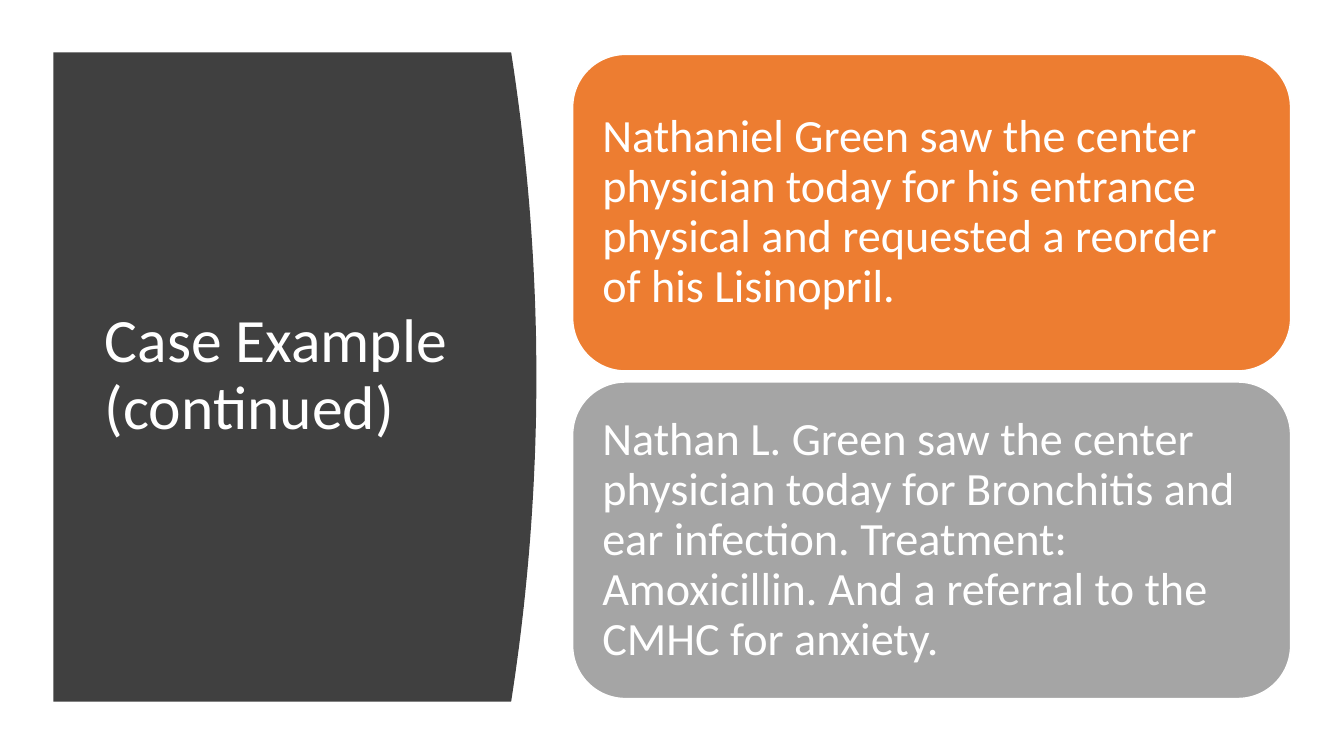
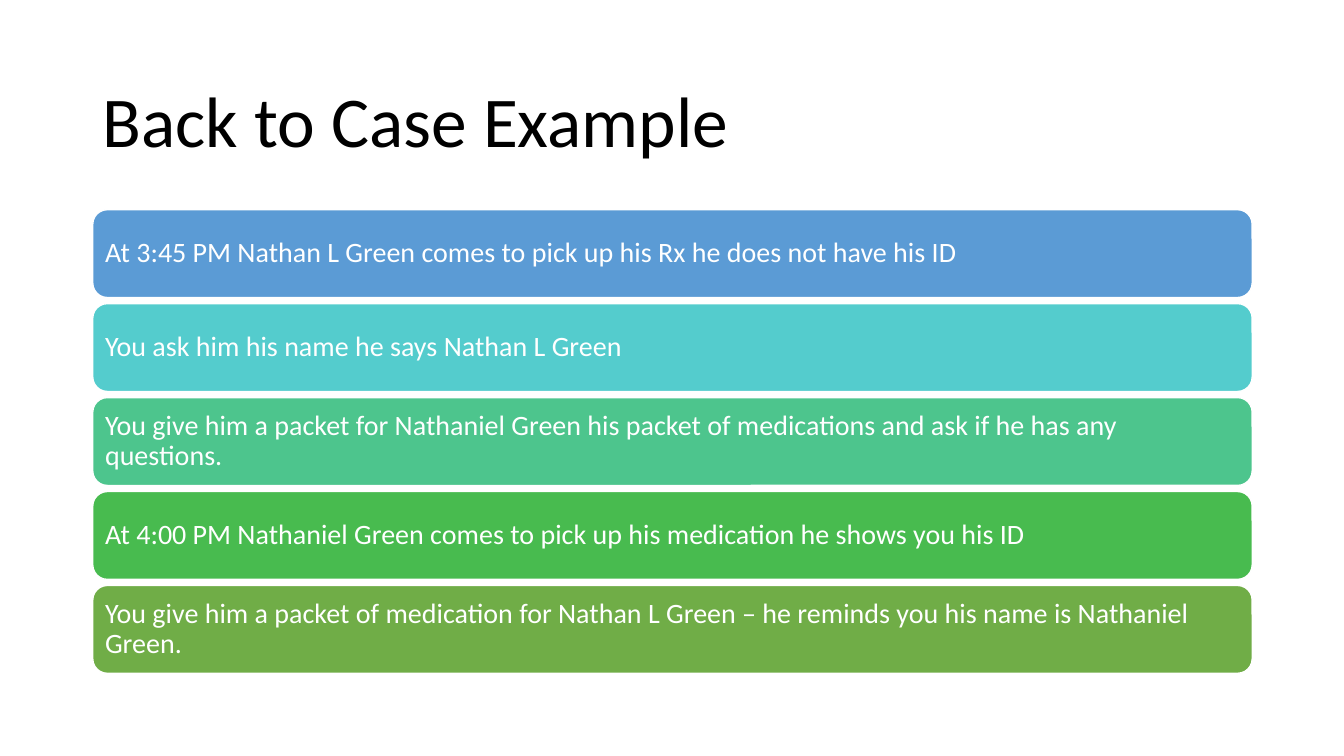
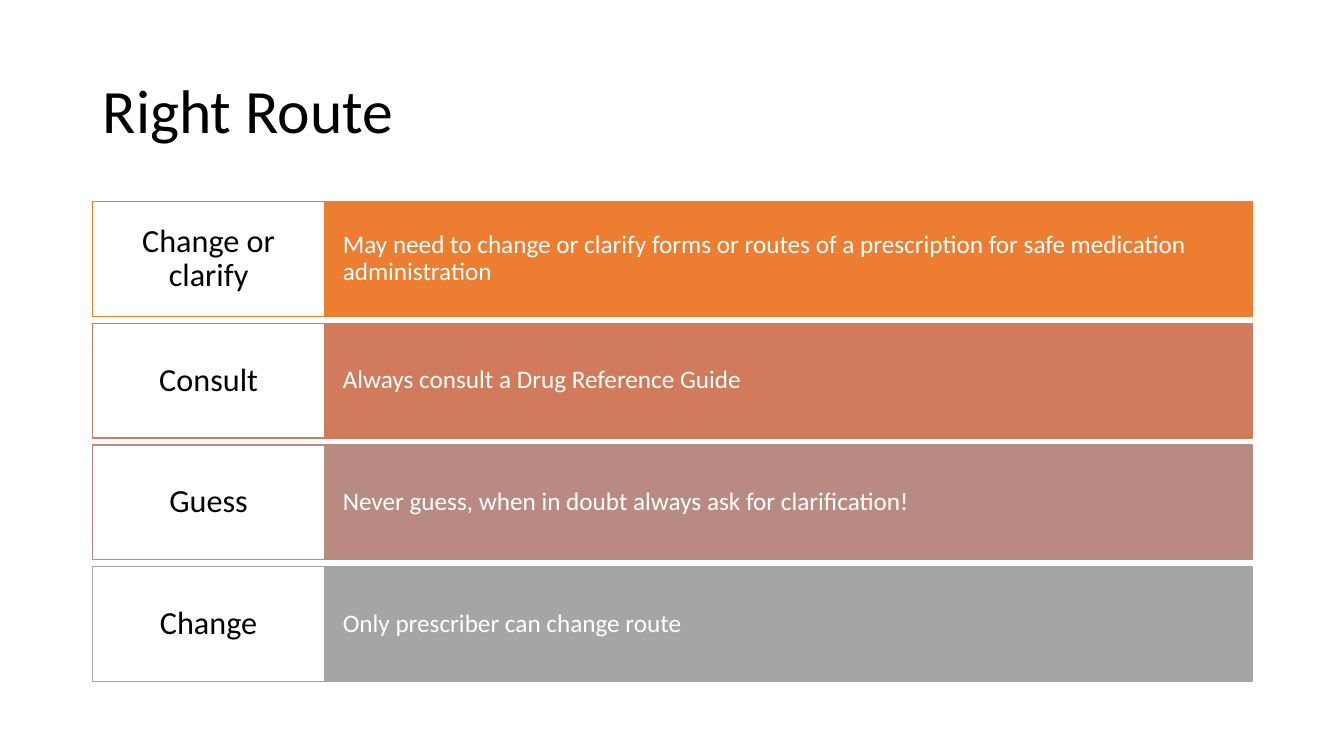
import pptx
import pptx.dml.color
import pptx.enum.shapes
import pptx.enum.text
import pptx.util

RGB = pptx.dml.color.RGBColor
SHAPE = pptx.enum.shapes.MSO_SHAPE
ALIGN = pptx.enum.text.PP_ALIGN

EMU_PER_PX = 9144  # 100 px to the inch
FONT = "Calibri"

WHITE = RGB(0xFF, 0xFF, 0xFF)
BLACK = RGB(0x00, 0x00, 0x00)
CHARCOAL = RGB(0x40, 0x40, 0x40)
ORANGE = RGB(0xED, 0x7D, 0x31)
TERRACOTTA = RGB(0xD1, 0x7B, 0x5C)
ROSE = RGB(0xB9, 0x8A, 0x82)
GRAY = RGB(0xA5, 0xA5, 0xA5)
BLUE = RGB(0x5B, 0x9B, 0xD5)
TURQUOISE = RGB(0x54, 0xCC, 0xCD)
SEA_GREEN = RGB(0x4D, 0xC5, 0x8D)
GREEN = RGB(0x48, 0xBB, 0x4F)
OLIVE = RGB(0x70, 0xAD, 0x47)


def px(length):
    return pptx.util.Emu(round(length * EMU_PER_PX))


def write(shape, text, size, color, inset=(10, 5), align=ALIGN.LEFT):
    """Set one vertically centred paragraph; inset is (sides, top and bottom)."""
    frame = shape.text_frame
    frame.word_wrap = True
    frame.vertical_anchor = pptx.enum.text.MSO_ANCHOR.MIDDLE
    frame.margin_left = frame.margin_right = px(inset[0])
    frame.margin_top = frame.margin_bottom = px(inset[1])
    para = frame.paragraphs[0]
    para.text = text
    para.alignment = align
    para.line_spacing = 0.9
    para.font.name = FONT
    para.font.size = pptx.util.Pt(size)
    para.font.color.rgb = color


def paint(shape, fill, line=None):
    shape.shadow.inherit = False
    shape.fill.solid()
    shape.fill.fore_color.rgb = fill
    if line is None:
        shape.line.fill.background()
    else:
        shape.line.color.rgb = line
        shape.line.width = pptx.util.Pt(1)


def add_title(page, box, text, size=44, color=BLACK):
    write(page.shapes.add_textbox(*map(px, box)), text, size, color)


def add_card(page, kind, box, fill, line, text, size, color, inset, align=ALIGN.LEFT):
    card = page.shapes.add_shape(kind, *map(px, box))
    paint(card, fill, line)
    write(card, text, size, color, inset, align)


def split_rows(box, count, gap):
    """Cut a box into equal rows with equal gaps."""
    left, top, width, height = box
    row = (height - gap * (count - 1)) / count
    return [(left, top + i * (row + gap), width, row) for i in range(count)]


def add_curved_panel(page, box, bulge, steps=48):
    """Draw a panel whose right side bows outward by bulge."""
    left, top, width, height = box
    edge = []
    for step in range(steps + 1):
        offset = 2 * step / steps - 1
        edge.append((left + width - bulge * offset ** 2, top + height * step / steps))
    outline = page.shapes.build_freeform(px(left), px(top), scale=1.0)
    points = edge + [(left, top + height)]
    outline.add_line_segments([(px(x), px(y)) for x, y in points], close=True)
    paint(outline.convert_to_shape(), CHARCOAL)


def add_rounded_list(page, box, gap, items, size, inset):
    for row, (fill, text) in zip(split_rows(box, len(items), gap), items):
        add_card(page, SHAPE.ROUNDED_RECTANGLE, row, fill, WHITE, text, size, WHITE, (inset, inset))


def add_labelled_list(page, box, gap, label_width, items):
    rows = split_rows(box, len(items), gap)
    for (left, top, width, height), (color, label, detail) in zip(rows, items):
        detail_box = (left + label_width, top, width - label_width, height)
        label_box = (left, top, label_width, height)
        add_card(page, SHAPE.RECTANGLE, detail_box, color, color, detail, 18, WHITE, (18, 29))
        add_card(page, SHAPE.RECTANGLE, label_box, WHITE, color, label, 23, BLACK, (12, 11),
                 ALIGN.CENTER)


def build_case_example(page):
    add_curved_panel(page, (53, 52, 479, 644), bulge=25)
    add_title(page, (94, 111, 373, 524), "Case Example (continued)", color=WHITE)
    add_rounded_list(page, (568, 54, 712, 639), 11, [
        (ORANGE, "Nathaniel Green saw the center physician today for his entrance physical "
                 "and requested a reorder of his Lisinopril."),
        (GRAY, "Nathan L. Green saw the center physician today for Bronchitis and ear "
               "infection. Treatment: Amoxicillin. And a referral to the CMHC for anxiety."),
    ], size=33, inset=14)


def build_back_to_case(page):
    add_title(page, (92, 61, 1150, 124), "Back to Case Example", size=51)
    add_rounded_list(page, (92, 208, 1150, 460), 6, [
        (BLUE, "At 3:45 PM Nathan L Green comes to pick up his Rx he does not have his ID"),
        (TURQUOISE, "You ask him his name he says Nathan L Green"),
        (SEA_GREEN, "You give him a packet for Nathaniel Green his packet of medications "
                    "and ask if he has any questions."),
        (GREEN, "At 4:00 PM Nathaniel Green comes to pick up his medication he shows you his ID"),
        (OLIVE, "You give him a packet of medication for Nathan L Green – he reminds you "
                "his name is Nathaniel Green."),
    ], size=20, inset=8)


def build_right_route(page):
    add_title(page, (92, 40, 1150, 145), "Right Route")
    add_labelled_list(page, (92, 200, 1150, 476), 7, 230, [
        (ORANGE, "Change or clarify", "May need to change or clarify forms or routes of a "
                                      "prescription for safe medication administration"),
        (TERRACOTTA, "Consult", "Always consult a Drug Reference Guide"),
        (ROSE, "Guess", "Never guess, when in doubt always ask for clarification!"),
        (GRAY, "Change", "Only prescriber can change route"),
    ])


def main():
    deck = pptx.Presentation()
    deck.slide_width, deck.slide_height = px(1333), px(750)
    blank = deck.slide_layouts[6]
    for build in (build_case_example, build_back_to_case, build_right_route):
        build(deck.slides.add_slide(blank))
    deck.save("out.pptx")


if __name__ == "__main__":
    main()
